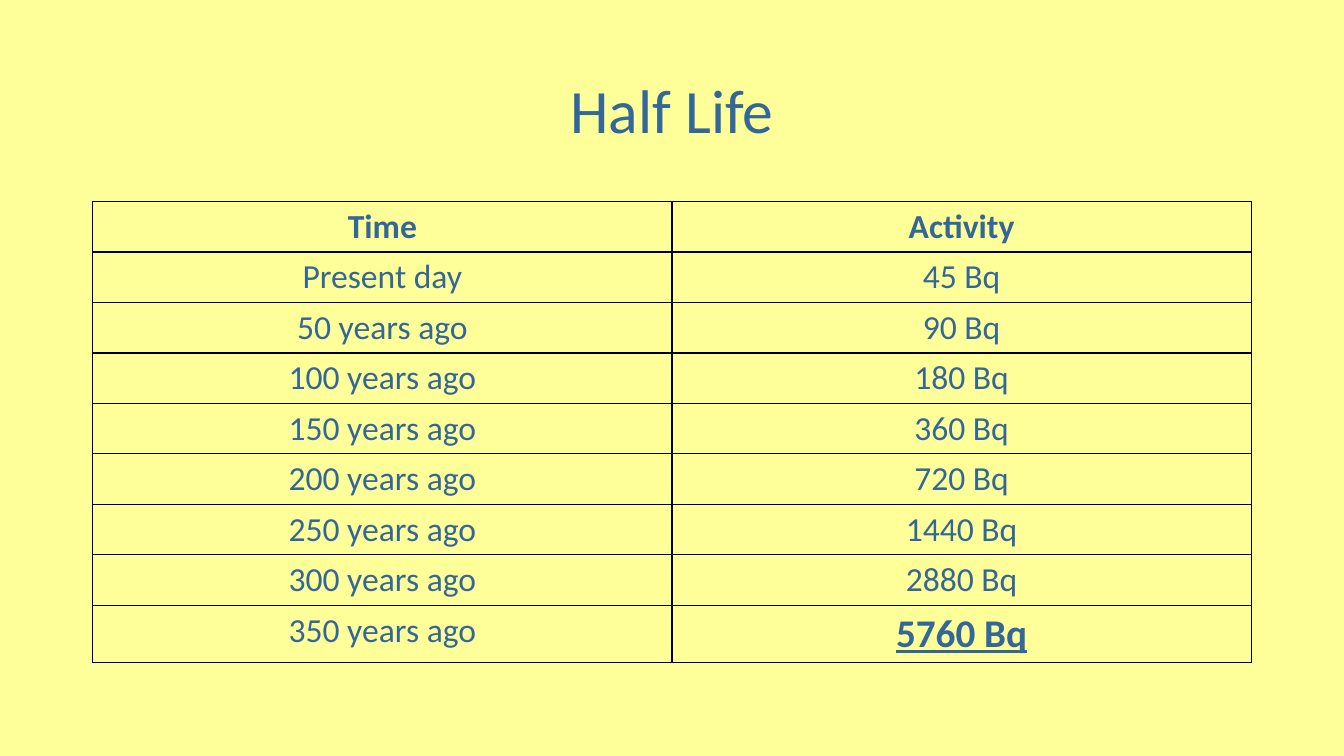
from dataclasses import dataclass

from pptx import Presentation
from pptx.dml.color import RGBColor
from pptx.enum.text import MSO_ANCHOR, PP_ALIGN
from pptx.oxml import parse_xml
from pptx.oxml.ns import nsdecls
from pptx.slide import Slide
from pptx.table import _Cell
from pptx.text.text import TextFrame
from pptx.util import Inches, Pt

PAGE_WIDTH, PAGE_HEIGHT = Inches(13.33), Inches(7.5)
MARGIN = Inches(0.92)
CONTENT_WIDTH = PAGE_WIDTH - 2 * MARGIN
ROW_HEIGHT = Inches(0.5)
FONT = "Calibri"
PAPER, INK, GRID = "FFFF99", "336699", "000000"


@dataclass(frozen=True)
class Span:
    text: str
    size: int = 24
    bold: bool = False
    underline: bool = False


def colour(value: str) -> RGBColor:
    return RGBColor.from_string(value)


def write_centred(frame: TextFrame, span: Span, spacing: float = 1.0) -> None:
    para = frame.paragraphs[0]
    para.alignment = PP_ALIGN.CENTER
    para.line_spacing = spacing
    run = para.add_run()
    run.text = span.text
    font = run.font
    font.name, font.size = FONT, Pt(span.size)
    font.bold, font.underline = span.bold, span.underline
    font.color.rgb = colour(INK)


def draw_borders(cell: _Cell) -> None:
    properties = cell._tc.get_or_add_tcPr()
    for side in ("lnL", "lnR", "lnT", "lnB"):
        properties.append(parse_xml(
            f'<a:{side} {nsdecls("a")} w="{Pt(1)}"><a:solidFill>'
            f'<a:srgbClr val="{GRID}"/></a:solidFill></a:{side}>'))


def draw_title(page: Slide, title: Span) -> None:
    box = page.shapes.add_textbox(MARGIN, Inches(0.4), CONTENT_WIDTH, Inches(1.45))
    box.text_frame.word_wrap = True
    box.text_frame.vertical_anchor = MSO_ANCHOR.MIDDLE
    write_centred(box.text_frame, title, spacing=0.9)


def draw_table(page: Slide, rows: list[tuple[Span, Span]]) -> None:
    table = page.shapes.add_table(len(rows), 2, MARGIN, Inches(2), CONTENT_WIDTH,
                                  ROW_HEIGHT * len(rows)).table
    table.first_row = table.horz_banding = False
    for row_index, row in enumerate(rows):
        for column_index, span in enumerate(row):
            cell = table.cell(row_index, column_index)
            draw_borders(cell)
            cell.fill.background()
            write_centred(cell.text_frame, span)


def decay_rows() -> list[tuple[Span, Span]]:
    # Activity doubles with every 50 years back in time
    rows = [(Span("Time", bold=True), Span("Activity", bold=True))]
    for step in range(7):
        time = f"{50 * step} years ago" if step else "Present day"
        rows.append((Span(time), Span(f"{45 * 2 ** step} Bq")))
    # The answer stands out in the last row
    rows.append((Span("350 years ago"),
                 Span("5760 Bq", size=28, bold=True, underline=True)))
    return rows


def main() -> None:
    # Page and background
    deck = Presentation()
    deck.slide_width, deck.slide_height = PAGE_WIDTH, PAGE_HEIGHT
    page = deck.slides.add_slide(deck.slide_layouts[6])
    page.background.fill.solid()
    page.background.fill.fore_color.rgb = colour(PAPER)

    # Title and table
    draw_title(page, Span("Half Life", size=44))
    draw_table(page, decay_rows())
    deck.save("out.pptx")


if __name__ == "__main__":
    main()
